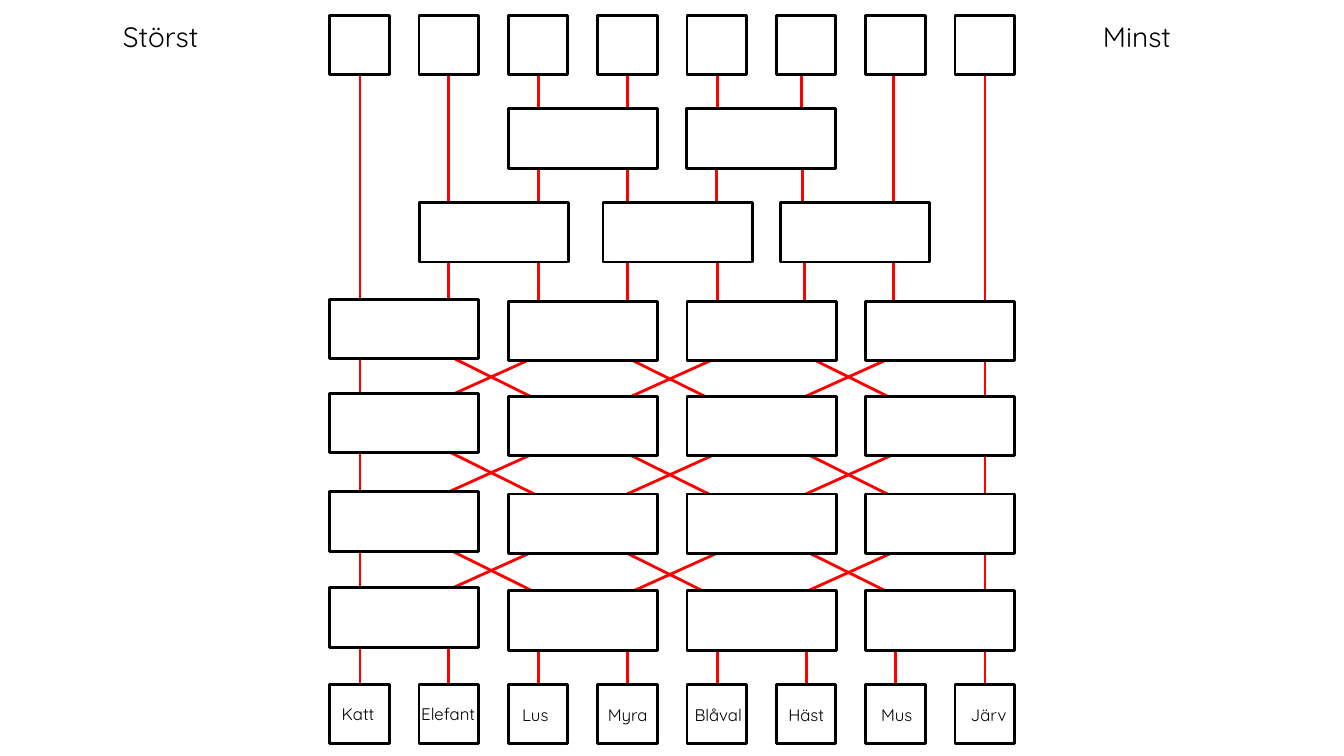
from lxml.etree import SubElement
from pptx import Presentation
from pptx.dml.color import RGBColor
from pptx.enum.shapes import MSO_CONNECTOR, MSO_SHAPE
from pptx.enum.text import MSO_AUTO_SIZE
from pptx.oxml.ns import qn
from pptx.util import Inches, Pt

COLOURS = {"wire": "FF0000", "outline": "000000", "box": "FFFFFF", "text": "000000"}
FONT = "Quicksand"

# Animal name, left and top of its label
ANIMALS = [
    ("Katt", 3.29, 6.93), ("Elefant", 4.08, 6.93), ("Lus", 5.08, 6.94),
    ("Myra", 5.93, 6.94), ("Blåval", 6.79, 6.94), ("Häst", 7.72, 6.94),
    ("Mus", 8.64, 6.94), ("Järv", 9.53, 6.94),
]
# Heading, left and width
HEADINGS = [("Störst", 1.12, 0.95), ("Minst", 10.84, 0.89)]

# Top, bottom and horizontal places of the straight wires
OUTER = [3.57, 9.77]
STRAIGHT_WIRES = [
    (0.60, 2.20, [4.45, 8.86]),
    (0.60, 3.15, OUTER),
    (0.63, 1.20, [5.34, 6.22, 7.12, 7.95]),
    (1.53, 2.10, [5.34, 6.22, 7.11, 7.96]),
    (2.56, 3.13, [4.45, 5.34, 6.22, 7.12, 7.98, 8.86]),
    (3.47, 4.04, OUTER),
    (4.40, 4.97, OUTER),
    (5.37, 5.94, OUTER),
    (6.32, 6.89, [3.57, 4.45, 5.34, 6.22, 7.12, 8.00, 8.88, 9.77]),
]
# Tops of the crossings, one row for each gap between full rows
CROSSING_TOPS = [(3.53, 3.55, 3.53), (4.48, 4.50, 4.50), (5.45, 5.49, 5.47)]

# Top and lefts of the upper comparison boxes
UPPER_ROWS = [(1.08, [5.04, 6.81]), (2.01, [4.16, 5.98, 7.74])]
# Top of the first box and of the other three in each full row
FULL_ROWS = [(2.97, 2.99), (3.90, 3.93), (4.88, 4.90), (5.83, 5.86)]
END_ROWS = [0.15, 6.79]

LEFT, LANE_STEP = 3.27, 0.886
BOX_STEP = 2 * LANE_STEP
SIDE, BOX_WIDTH = 0.59, 1.48
FALL, RISE = 0.44, 0.40


def colour(name):
    return RGBColor.from_string(COLOURS[name])


def add_wire(page, start, end):
    wire = page.shapes.add_connector(
        MSO_CONNECTOR.STRAIGHT, *(Inches(value) for value in (*start, *end)))
    wire.line.color.rgb = colour("wire")
    wire.line.width = Pt(2)
    SubElement(wire._element.spPr, qn("a:effectLst"))


def add_box(page, left, top, width):
    box = page.shapes.add_shape(
        MSO_SHAPE.RECTANGLE, Inches(left), Inches(top), Inches(width), Inches(SIDE))
    box.shadow.inherit = False
    box.fill.solid()
    box.fill.fore_color.rgb = colour("box")
    box.line.color.rgb = colour("outline")
    box.line.width = Pt(2)


def add_text(page, text, *, left, top, width, height, size, wrap):
    box = page.shapes.add_textbox(
        Inches(left), Inches(top), Inches(width), Inches(height))
    frame = box.text_frame
    frame.word_wrap = wrap
    frame.auto_size = MSO_AUTO_SIZE.SHAPE_TO_FIT_TEXT
    span = frame.paragraphs[0].add_run()
    span.text = text
    span.font.name = FONT
    span.font.size = Pt(size)
    span.font.color.rgb = colour("text")


def draw_wires(page):
    for tops in CROSSING_TOPS:
        for column, top in enumerate(tops):
            left = 4.45 + column * BOX_STEP
            right = left + LANE_STEP
            add_wire(page, (left, top), (right, top + FALL))
            add_wire(page, (left, top + RISE), (right, top))
    for top, bottom, places in STRAIGHT_WIRES:
        for place in places:
            add_wire(page, (place, top), (place, bottom))


def draw_boxes(page):
    for top in END_ROWS:
        for lane in range(len(ANIMALS)):
            add_box(page, LEFT + lane * LANE_STEP, top, SIDE)
    for first_top, other_top in FULL_ROWS:
        for column in range(4):
            top = other_top if column else first_top
            add_box(page, LEFT + column * BOX_STEP, top, BOX_WIDTH)
    for top, lefts in UPPER_ROWS:
        for left in lefts:
            add_box(page, left, top, BOX_WIDTH)


def main():
    deck = Presentation()
    deck.slide_width, deck.slide_height = Inches(13.33), Inches(7.5)
    page = deck.slides.add_slide(deck.slide_layouts[6])
    draw_wires(page)
    draw_boxes(page)
    for name, left, top in ANIMALS:
        add_text(page, name, left=left, top=top, width=0.76, height=0.3,
                 size=12, wrap=True)
    for heading, left, width in HEADINGS:
        add_text(page, heading, left=left, top=0.14, width=width, height=0.44,
                 size=20, wrap=False)
    deck.save("out.pptx")


if __name__ == "__main__":
    main()
